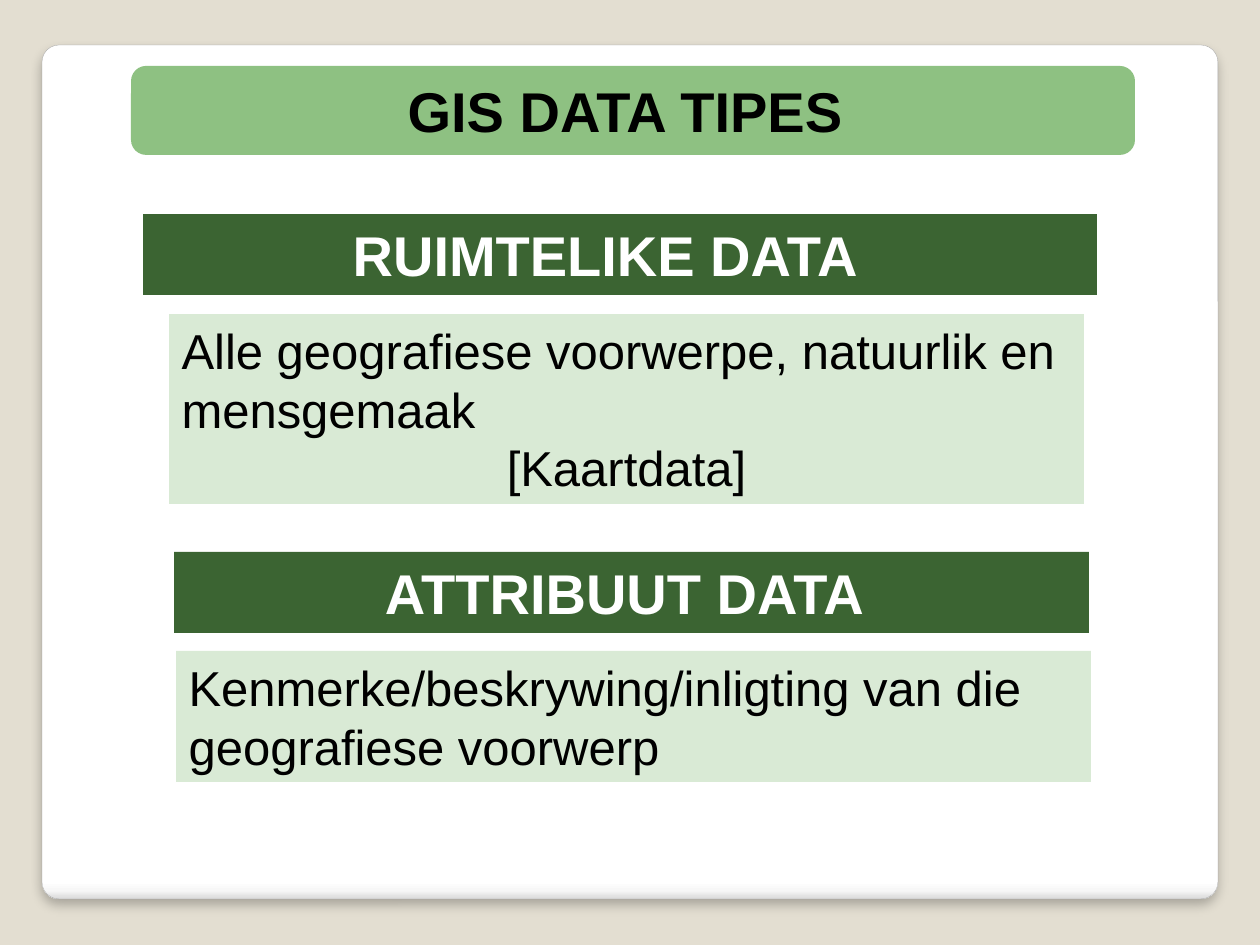
"""Build the slide on the GIS data types: spatial data and attribute data."""
from dataclasses import dataclass
from typing import Optional

from pptx import Presentation
from pptx.dml.color import RGBColor
from pptx.enum.shapes import MSO_SHAPE as Preset
from pptx.enum.text import MSO_ANCHOR as Anchor, MSO_AUTO_SIZE as AutoSize, PP_ALIGN as Align
from pptx.oxml import parse_xml
from pptx.oxml.ns import nsdecls
from pptx.oxml.xmlchemy import OxmlElement
from pptx.shapes.autoshape import Shape
from pptx.slide import Slide
from pptx.util import Pt

PX = 914400 // 126
COMPARISON_LAYOUT = 4
Box = tuple[int, int, int, int]

BEIGE = RGBColor(0xE3, 0xDE, 0xD1)
WHITE = RGBColor(0xFF, 0xFF, 0xFF)
OFF_WHITE = RGBColor(0xF7, 0xF7, 0xF7)
EDGE_GREY = RGBColor(0xDA, 0xDA, 0xDA)
OUTLINE_GREY = RGBColor(0xA4, 0xA4, 0xA4)
BLACK = RGBColor(0x00, 0x00, 0x00)
MID_GREEN = RGBColor(0x8E, 0xC1, 0x82)
DARK_GREEN = RGBColor(0x3B, 0x64, 0x32)
PALE_GREEN = RGBColor(0xD9, 0xEA, 0xD5)

CARD_BOX = (42, 45, 1176, 854)
TITLE_BOX = (131, 66, 1004, 89)
CARD_STOPS = [(0, WHITE), (98, WHITE), (99, OFF_WHITE), (100, EDGE_GREY)]


@dataclass(frozen=True)
class Style:
    """Look shared by panels of one role."""
    fill: Optional[RGBColor]
    ink: RGBColor
    size: int
    bold: bool
    anchor: Anchor = Anchor.TOP


@dataclass(frozen=True)
class Panel:
    """A text panel, with its box in px."""
    placeholder: int
    box: Box
    style: Style
    lines: tuple[tuple[str, Align], ...]


TITLE = Style(None, BLACK, 32, True, Anchor.MIDDLE)
HEADING = Style(DARK_GREEN, WHITE, 32, True)
DEFINITION = Style(PALE_GREEN, BLACK, 28, False)

PANELS = [
    Panel(0, TITLE_BOX, TITLE, (("GIS DATA TIPES ", Align.CENTER),)),
    Panel(1, (143, 214, 954, 81), HEADING, (("RUIMTELIKE DATA  ", Align.CENTER),)),
    Panel(3, (174, 552, 915, 81), HEADING, (("ATTRIBUUT DATA ", Align.CENTER),)),
    Panel(2, (169, 314, 915, 190), DEFINITION, (
        ("Alle geografiese voorwerpe, natuurlik en mensgemaak", Align.LEFT),
        ("[Kaartdata]", Align.CENTER))),
    Panel(4, (176, 651, 915, 131), DEFINITION, (
        ("Kenmerke/beskrywing/inligting van die geografiese voorwerp", Align.LEFT),)),
]


def apply(target: object, values: dict) -> None:
    """Set every named attribute on the target."""
    for name, value in values.items():
        setattr(target, name, value)


def place(shape: Shape, box: Box) -> None:
    """Put the shape at a box given in px."""
    apply(shape, dict(zip(("left", "top", "width", "height"), (n * PX for n in box))))


def add_rounded(slide: Slide, box: Box, rounding: float) -> Shape:
    """Add a rounded rectangle directly behind the title."""
    rounded = slide.shapes.add_shape(Preset.ROUNDED_RECTANGLE, *(n * PX for n in box))
    rounded.adjustments[0] = rounding
    rounded.shadow.inherit = False
    slide.shapes.title._element.addprevious(rounded._element)
    return rounded


def draw_card(slide: Slide) -> None:
    """Draw the white rounded card with its soft shadow."""
    card = add_rounded(slide, CARD_BOX, 0.02)
    card.line.color.rgb = OUTLINE_GREY
    card.line.width = Pt(0.16)
    properties = card._element.spPr
    stops = "".join(f'<a:gs pos="{at * 1000}"><a:srgbClr val="{color}"/></a:gs>'
                    for at, color in CARD_STOPS)
    properties.insert(2, parse_xml(
        f'<a:gradFill {nsdecls("a")}><a:gsLst>{stops}</a:gsLst>'
        '<a:lin ang="5400000" scaled="0"/></a:gradFill>'))
    properties[-1].append(parse_xml(
        f'<a:outerShdw {nsdecls("a")} blurRad="{Pt(6)}" dist="{Pt(4)}" dir="5400000" '
        f'algn="t" rotWithShape="0"><a:srgbClr val="{BLACK}"><a:alpha val="25000"/>'
        '</a:srgbClr></a:outerShdw>'))


def draw_title_bar(slide: Slide) -> None:
    """Draw the rounded green bar under the title text."""
    bar = add_rounded(slide, TITLE_BOX, 0.17)
    bar.fill.solid()
    bar.fill.fore_color.rgb = MID_GREEN
    bar.line.fill.background()


def fill_panel(slide: Slide, panel: Panel) -> None:
    """Move, colour and write one placeholder."""
    shape = next(item for item in slide.placeholders
                 if item.placeholder_format.idx == panel.placeholder)
    place(shape, panel.box)
    style = panel.style
    if style.fill is not None:
        shape.fill.solid()
        shape.fill.fore_color.rgb = style.fill
    frame = shape.text_frame
    frame.text = "\n".join(text for text, _ in panel.lines)
    apply(frame, {"word_wrap": True, "auto_size": AutoSize.NONE,
                  "vertical_anchor": style.anchor})
    for paragraph, (_, alignment) in zip(frame.paragraphs, panel.lines):
        apply(paragraph, {"alignment": alignment, "space_before": Pt(0)})
        layout = paragraph._p.get_or_add_pPr()
        layout.set("marL", "0")
        layout.set("indent", "0")
        layout.append(OxmlElement("a:buNone"))
        font = paragraph.runs[0].font
        apply(font, {"name": "Arial", "size": Pt(style.size), "bold": style.bold})
        font.color.rgb = style.ink


def main() -> None:
    """Build and save the presentation."""
    deck = Presentation()
    apply(deck, {"slide_width": 1260 * PX, "slide_height": 945 * PX})
    slide = deck.slides.add_slide(deck.slide_layouts[COMPARISON_LAYOUT])
    slide.background.fill.solid()
    slide.background.fill.fore_color.rgb = BEIGE
    draw_card(slide)
    draw_title_bar(slide)
    for panel in PANELS:
        fill_panel(slide, panel)
    deck.save("out.pptx")


if __name__ == "__main__":
    main()
